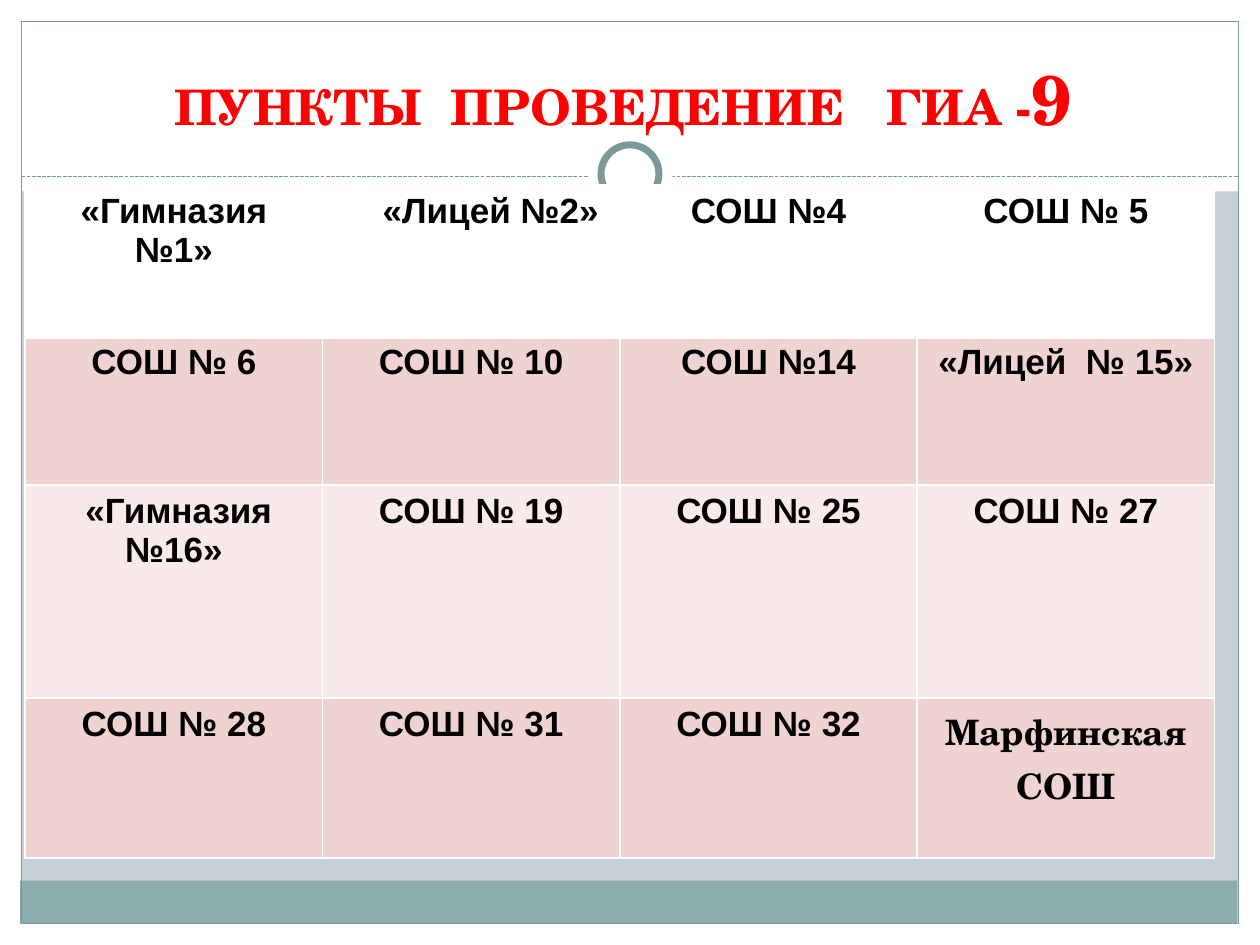
from lxml.etree import SubElement
from pptx import Presentation
from pptx.dml.color import RGBColor
from pptx.enum.dml import MSO_LINE
from pptx.enum.shapes import MSO_CONNECTOR, MSO_SHAPE
from pptx.enum.text import MSO_ANCHOR, PP_ALIGN
from pptx.oxml.ns import qn
from pptx.util import Inches, Pt

SANS, SERIF = "Arial", "TeX Gyre Schola"
WHITE, TEAL, RED, BLACK = "FFFFFF", "7C999A", "FF0000", "000000"

TITLE = [("ПУНКТЫ  ПРОВЕДЕНИЕ   ГИА -", 28), ("9 ", 40)]
SCHOOLS = [
    ["«Гимназия №1»", "«Лицей №2»", "СОШ №4", "СОШ № 5"],
    ["СОШ № 6", "СОШ № 10", "СОШ №14", "«Лицей  № 15»"],
    [" «Гимназия №16»", "СОШ № 19", "СОШ № 25", "СОШ № 27"],
    ["СОШ № 28", "СОШ № 31", "СОШ № 32", "Марфинская СОШ"],
]
ROW_HEIGHTS = [1.2, 1.18, 1.69, 1.27]
ROW_FILLS = [WHITE, "EED3D0", "F7EAE9", "EED3D0"]
COL_WIDTH = 2.36
SERIF_SCHOOL = "Марфинская СОШ"
INDENTS = {"«Лицей №2»": 0.31}

MARGINS = [(0, 7.33, 10, 0.17), (0, 0, 10, 1.52), (0, 0, 0.17, 7.5), (9.83, 0, 0.17, 7.5)]


def color(value):
    return RGBColor.from_string(value)


def add_shape(kind, box, fill=None, line=None, width=0.75):
    s = slide.shapes.add_shape(kind, *map(Inches, box))
    s.shadow.inherit = False
    if fill:
        s.fill.solid()
        s.fill.fore_color.rgb = color(fill)
    else:
        s.fill.background()
    if line:
        s.line.color.rgb = color(line)
        s.line.width = Pt(width)
    else:
        s.line.fill.background()
    return s


def add_run(p, text, size=20, font=SANS, fill=BLACK):
    p.alignment = PP_ALIGN.CENTER
    r = p.add_run()
    r.text = text
    r.font.size, r.font.name, r.font.bold = Pt(size), font, True
    r.font.color.rgb = color(fill)


def set_borders(cell, bottom):
    tc_pr = cell._tc.get_or_add_tcPr()
    sides = [("a:lnL", 1), ("a:lnR", 1), ("a:lnT", 1), ("a:lnB", bottom)]
    for i, (tag, width) in enumerate(sides):
        ln = tc_pr.makeelement(qn(tag), {"w": str(Pt(width))})
        fill = SubElement(ln, qn("a:solidFill"))
        SubElement(fill, qn("a:srgbClr"), val=WHITE)
        tc_pr.insert(i, ln)


prs = Presentation()
prs.slide_width, prs.slide_height = Inches(10), Inches(7.5)
slide = prs.slides.add_slide(prs.slide_layouts[6])
slide.background.fill.solid()
slide.background.fill.fore_color.rgb = color("C5D1D7")

# Frame and divider
for box in MARGINS:
    add_shape(MSO_SHAPE.RECTANGLE, box, WHITE)
add_shape(MSO_SHAPE.RECTANGLE, (0.16, 6.99, 9.66, 0.34), "8CADAE")
add_shape(MSO_SHAPE.RECTANGLE, (0.17, 0.17, 9.66, 7.16), line=TEAL)
divider = slide.shapes.add_connector(
    MSO_CONNECTOR.STRAIGHT, Inches(0.17), Inches(1.4), Inches(9.83), Inches(1.4))
divider.line.color.rgb = color(TEAL)
divider.line.width = Pt(0.75)
divider.line.dash_style = MSO_LINE.SQUARE_DOT
SubElement(divider._element.spPr, qn("a:effectLst"))
add_shape(MSO_SHAPE.OVAL, (4.67, 1.05, 0.67, 0.67), WHITE)
add_shape(MSO_SHAPE.OVAL, (4.77, 1.15, 0.46, 0.46), WHITE, TEAL, 4)

# Title
tf = slide.shapes.add_textbox(*map(Inches, (0.55, 0.29, 8.95, 0.87))).text_frame
tf.word_wrap = True
tf.vertical_anchor = MSO_ANCHOR.BOTTOM
for text, size in TITLE:
    add_run(tf.paragraphs[0], text, size=size, font=SERIF, fill=RED)

# Schools
rows, cols = len(SCHOOLS), len(SCHOOLS[0])
table = slide.shapes.add_table(
    rows, cols, Inches(0.2), Inches(1.47),
    Inches(COL_WIDTH * cols), Inches(sum(ROW_HEIGHTS))).table
for col in table.columns:
    col.width = Inches(COL_WIDTH)
for i, (names, height, fill) in enumerate(zip(SCHOOLS, ROW_HEIGHTS, ROW_FILLS)):
    table.rows[i].height = Inches(height)
    for j, name in enumerate(names):
        cell = table.cell(i, j)
        cell.fill.solid()
        cell.fill.fore_color.rgb = color(fill)
        cell.margin_left = Inches(0.1 + INDENTS.get(name, 0))
        set_borders(cell, bottom=3 if i == 0 else 1)
        add_run(cell.text_frame.paragraphs[0], name,
                font=SERIF if name == SERIF_SCHOOL else SANS)

prs.save("out.pptx")
